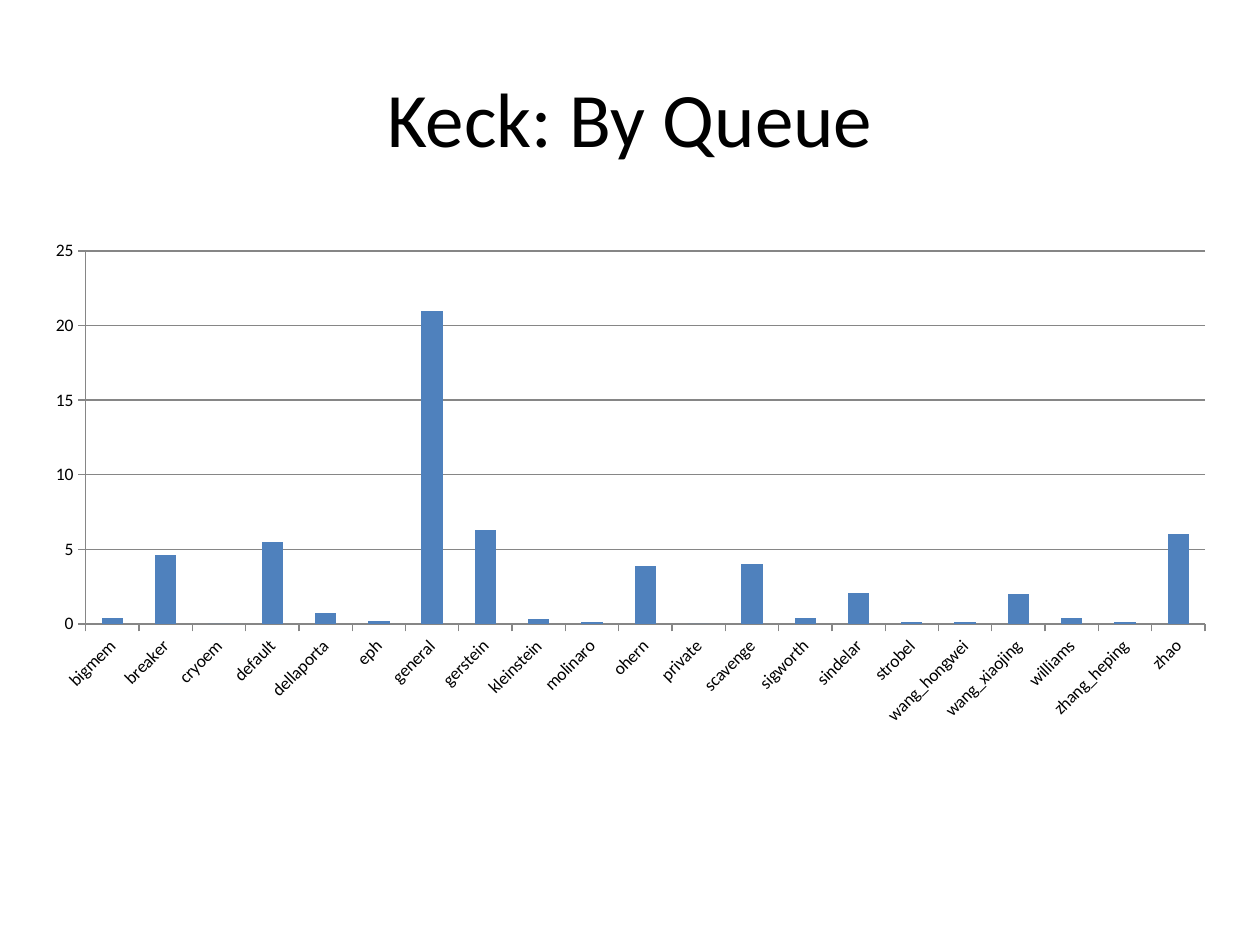
"""Build the slide with the load of each queue as a column chart."""
import pptx
import pptx.chart.data
import pptx.dml.color
import pptx.enum.chart
import pptx.enum.text
import pptx.util

BLACK = pptx.dml.color.RGBColor(0x00, 0x00, 0x00)
GREY = pptx.dml.color.RGBColor(0x86, 0x86, 0x86)
BLUE = pptx.dml.color.RGBColor(0x4F, 0x81, 0xBD)
SCALE = 914400 / 126

LOADS = {
    "bigmem": 0.4, "breaker": 4.6, "cryoem": 0, "default": 5.5,
    "dellaporta": 0.7, "eph": 0.2, "general": 21, "gerstein": 6.3,
    "kleinstein": 0.3, "molinaro": 0.1, "ohern": 3.9, "private": 0,
    "scavenge": 4, "sigworth": 0.4, "sindelar": 2.1, "strobel": 0.1,
    "wang_hongwei": 0.1, "wang_xiaojing": 2, "williams": 0.4,
    "zhang_heping": 0.1, "zhao": 6,
}


def px(num):
    return pptx.util.Emu(round(num * SCALE))


class Deck:
    face = "Calibri"

    def __init__(self, wide, high):
        self.prs = pptx.Presentation()
        self.prs.slide_width, self.prs.slide_height = px(wide), px(high)
        self.slide = self.prs.slides.add_slide(self.prs.slide_layouts[5])

    def style(self, font, size):
        font.name = self.face
        font.size = pptx.util.Pt(size)
        font.color.rgb = BLACK

    def title(self, text, left, top, wide, high):
        box = self.slide.shapes.title
        box.left, box.top, box.width, box.height = map(px, (left, top, wide, high))
        frame = box.text_frame
        frame.text = text
        frame.vertical_anchor = pptx.enum.text.MSO_ANCHOR.MIDDLE
        para = frame.paragraphs[0]
        para.alignment = pptx.enum.text.PP_ALIGN.CENTER
        self.style(para.runs[0].font, 44)

    def axis(self, axis, grid):
        axis.has_major_gridlines = grid
        axis.major_tick_mark = pptx.enum.chart.XL_TICK_MARK.OUTSIDE
        axis.minor_tick_mark = pptx.enum.chart.XL_TICK_MARK.NONE
        self.style(axis.tick_labels.font, 10)
        lines = [axis.format.line]
        if grid:
            lines.append(axis.major_gridlines.format.line)
        for line in lines:
            line.color.rgb = GREY
            line.width = pptx.util.Pt(0.75)

    def columns(self, loads, left, top, wide, high):
        data = pptx.chart.data.CategoryChartData()
        data.categories = list(loads)
        data.add_series("Series 1", list(loads.values()))
        kind = pptx.enum.chart.XL_CHART_TYPE.COLUMN_CLUSTERED
        chart = self.slide.shapes.add_chart(
            kind, *map(px, (left, top, wide, high)), data).chart
        chart.has_legend = chart.has_title = False
        self.style(chart.font, 10)
        self.axis(chart.category_axis, False)
        self.axis(chart.value_axis, True)
        chart.value_axis.minimum_scale = 0
        chart.value_axis.maximum_scale = 25
        chart.value_axis.major_unit = 5
        chart.category_axis._element.txPr.bodyPr.set("rot", "-2700000")
        plot = chart.plots[0]
        plot.gap_width = 150
        plot.vary_by_categories = False
        fill = plot.series[0].format.fill
        fill.solid()
        fill.fore_color.rgb = BLUE


def main():
    deck = Deck(1260, 945)
    deck.title("Keck: By Queue", 63, 38, 1134, 158)
    deck.columns(LOADS, 32, 231, 1197, 504)
    deck.prs.save("out.pptx")


if __name__ == "__main__":
    main()
